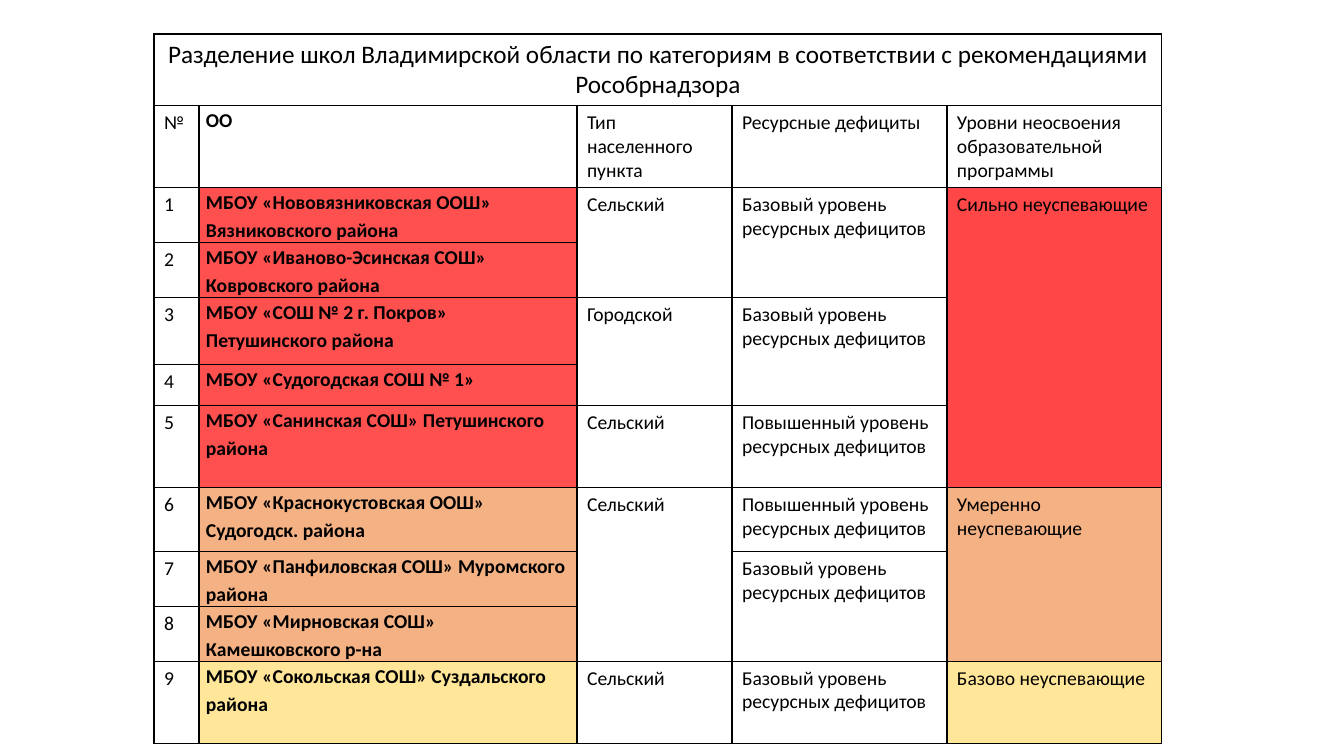
from dataclasses import dataclass

from lxml import etree
from pptx import Presentation
from pptx.dml.color import RGBColor
from pptx.enum.text import PP_ALIGN
from pptx.oxml.ns import qn
from pptx.table import Table, _Cell
from pptx.util import Pt

CENTER, LEFT = PP_ALIGN.CENTER, PP_ALIGN.LEFT
EMU_PER_PX = 12192000 / 1344
FONT = "Calibri"
BLACK, WHITE = "000000", "FFFFFF"
SCHOOL_RED, LEVEL_RED = "FF5050", "FF4747"
ORANGE, YELLOW = "F4B183", "FFE699"

NUMBER, SCHOOL, SETTLEMENT, DEFICIT, LEVEL = range(5)
FIRST_SCHOOL_ROW = 2
COLUMN_WIDTHS = (45, 378, 155, 215, 215)
ROW_HEIGHTS = (71, 82, 55, 55, 67, 41, 82, 64, 55, 55, 82)

TITLE = ("Разделение школ Владимирской области по категориям "
         "в соответствии с рекомендациями Рособрнадзора")
HEADINGS = ("№", "ОО", "Тип населенного пункта", "Ресурсные дефициты",
            "Уровни неосвоения образовательной программы")
BASIC = "Базовый уровень ресурсных дефицитов"
BASIC_SPLIT = "Базовый уровень\nресурсных дефицитов"
RAISED_SPLIT = "Повышенный уровень\nресурсных дефицитов"


@dataclass(frozen=True)
class School:
    name: str
    fill: str


@dataclass(frozen=True)
class Group:
    """A cell shared by consecutive schools, counted from 1."""
    column: int
    first: int
    count: int
    text: str
    fill: str | None = None


SCHOOLS = (
    School("МБОУ «Нововязниковская ООШ» Вязниковского района", SCHOOL_RED),
    School("МБОУ «Иваново-Эсинская СОШ» Ковровского района", SCHOOL_RED),
    School("МБОУ «СОШ № 2 г. Покров» Петушинского района", SCHOOL_RED),
    School("МБОУ «Судогодская СОШ № 1»", SCHOOL_RED),
    School("МБОУ «Санинская СОШ» Петушинского района", SCHOOL_RED),
    School("МБОУ «Краснокустовская ООШ» Судогодск. района", ORANGE),
    School("МБОУ «Панфиловская СОШ» Муромского района", ORANGE),
    School("МБОУ «Мирновская СОШ» Камешковского р-на", ORANGE),
    School("МБОУ «Сокольская СОШ» Суздальского района", YELLOW),
)
GROUPS = (
    Group(SETTLEMENT, 1, 2, "Сельский"),
    Group(SETTLEMENT, 3, 2, "Городской"),
    Group(SETTLEMENT, 5, 1, "Сельский"),
    Group(SETTLEMENT, 6, 3, "Сельский"),
    Group(SETTLEMENT, 9, 1, "Сельский"),
    Group(DEFICIT, 1, 2, BASIC),
    Group(DEFICIT, 3, 2, BASIC),
    Group(DEFICIT, 5, 1, RAISED_SPLIT),
    Group(DEFICIT, 6, 1, RAISED_SPLIT),
    Group(DEFICIT, 7, 2, BASIC_SPLIT),
    Group(DEFICIT, 9, 1, BASIC),
    Group(LEVEL, 1, 5, "Сильно неуспевающие", LEVEL_RED),
    Group(LEVEL, 6, 3, "Умеренно неуспевающие", ORANGE),
    Group(LEVEL, 9, 1, "Базово неуспевающие", YELLOW),
)


def px(length: int) -> int:
    return round(length * EMU_PER_PX)


def color(value: str) -> RGBColor:
    return RGBColor.from_string(value)


def add_borders(cell: _Cell) -> None:
    properties = cell._tc.get_or_add_tcPr()
    for position, side in enumerate(("lnL", "lnR", "lnT", "lnB")):
        line = etree.Element(qn(f"a:{side}"), w=str(Pt(1)))
        solid = etree.SubElement(line, qn("a:solidFill"))
        etree.SubElement(solid, qn("a:srgbClr"), val=BLACK)
        properties.insert(position, line)


def write_cell(cell: _Cell, text: str, fill: str | None = None, size: int = 14,
               align: PP_ALIGN = LEFT, is_school: bool = False) -> None:
    cell.text = text
    if fill:
        cell.fill.solid()
        cell.fill.fore_color.rgb = color(fill)
    if is_school:
        cell.margin_left = cell.margin_right = px(7)
        cell.margin_top = cell.margin_bottom = 0
    for paragraph in cell.text_frame.paragraphs:
        paragraph.alignment = align
        if is_school:
            paragraph.line_spacing = 1.15
        paragraph.font.name = FONT
        paragraph.font.size = Pt(size)
        paragraph.font.bold = is_school
        paragraph.font.color.rgb = color(BLACK)


def add_grid(slide) -> Table:
    frame = slide.shapes.add_table(
        len(ROW_HEIGHTS), len(COLUMN_WIDTHS), px(154), px(34),
        px(sum(COLUMN_WIDTHS)), px(sum(ROW_HEIGHTS)))
    table = frame.table
    table.first_row = table.horz_banding = False
    for column, width in zip(table.columns, COLUMN_WIDTHS):
        column.width = px(width)
    for row, height in zip(table.rows, ROW_HEIGHTS):
        row.height = px(height)
    for cell in table.iter_cells():
        cell.fill.background()
        add_borders(cell)
    return table


def fill_table(table: Table) -> None:
    # Title and column headings
    title = table.cell(0, 0)
    title.merge(table.cell(0, LEVEL))
    write_cell(title, TITLE, size=18, align=CENTER)
    for column, heading in enumerate(HEADINGS):
        write_cell(table.cell(1, column), heading, WHITE, is_school=column == SCHOOL)

    # Numbered schools
    for index, school in enumerate(SCHOOLS):
        row = FIRST_SCHOOL_ROW + index
        write_cell(table.cell(row, NUMBER), str(index + 1))
        write_cell(table.cell(row, SCHOOL), school.name, school.fill, is_school=True)

    # Settlement types, deficits and levels
    for group in GROUPS:
        row = FIRST_SCHOOL_ROW + group.first - 1
        cell = table.cell(row, group.column)
        if group.count > 1:
            cell.merge(table.cell(row + group.count - 1, group.column))
        write_cell(cell, group.text, group.fill)


def main() -> None:
    presentation = Presentation()
    presentation.slide_width, presentation.slide_height = px(1344), px(756)
    slide = presentation.slides.add_slide(presentation.slide_layouts[6])
    fill_table(add_grid(slide))
    presentation.save("out.pptx")


if __name__ == "__main__":
    main()
